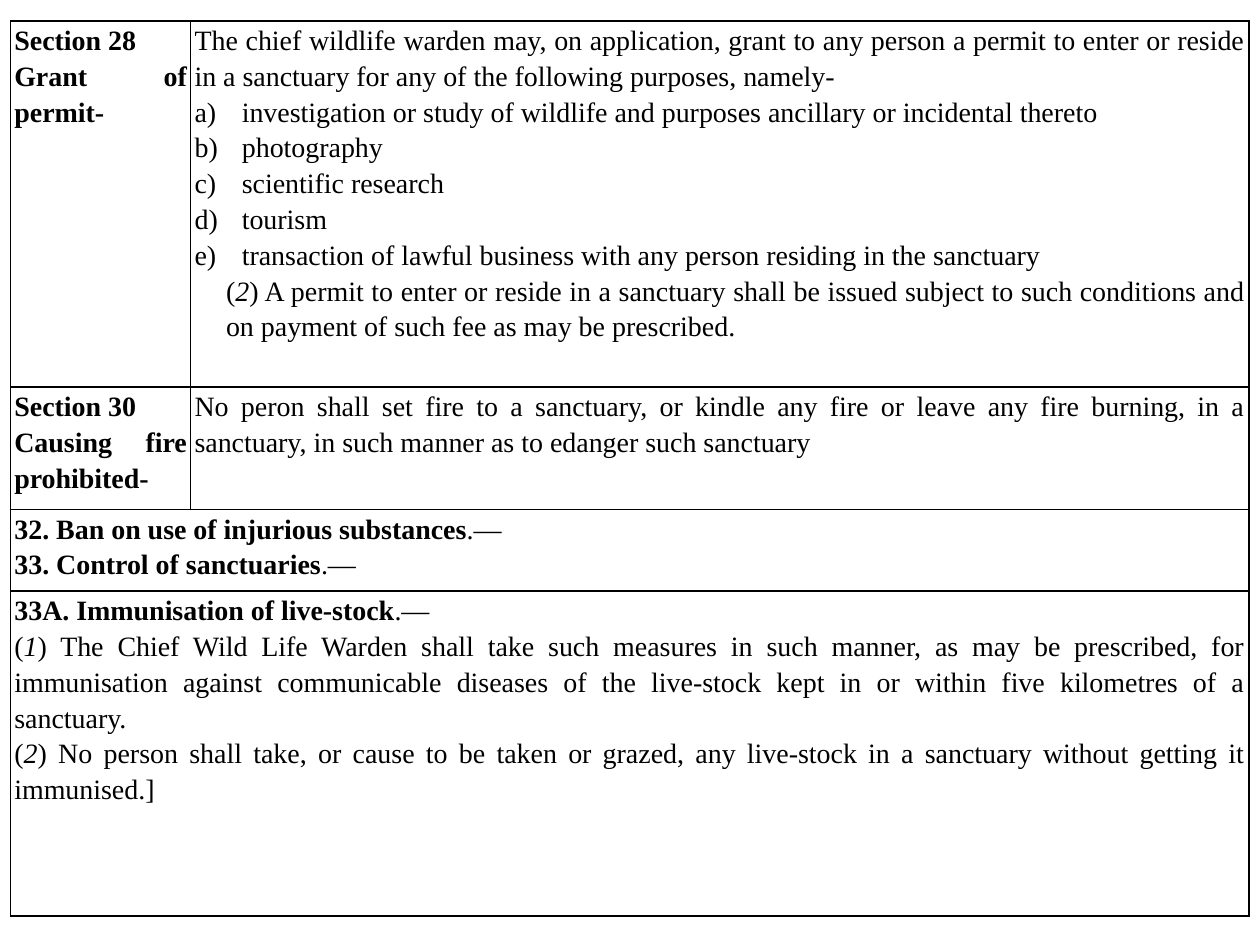
from lxml.etree import SubElement
from pptx import Presentation
from pptx.dml.color import RGBColor
from pptx.enum.text import PP_ALIGN
from pptx.oxml.ns import qn
from pptx.util import Pt

COLOURS = {"ink": "000000"}
FONT = "Times New Roman"
COLUMN_WIDTHS = [103, 604.8]
ROW_HEIGHTS = [209.3, 69.8, 46.7, 185.8]

# Each paragraph is (kind, spans); each span is (text, style).
SECTIONS = [
    [
        [
            ("plain", [("Section 28", "bold")]),
            ("plain", [("Grant of permit-", "bold")]),
        ],
        [
            ("plain", [("The chief wildlife warden may, on application, grant to any person a permit "
                        "to enter or reside in a sanctuary for any of the following purposes, namely-", "")]),
            ("lettered", [("investigation or study of wildlife and purposes ancillary or incidental thereto", "")]),
            ("lettered", [("photography", "")]),
            ("lettered", [("scientific research", "")]),
            ("lettered", [("tourism", "")]),
            ("lettered", [("transaction of lawful business with any person residing in the sanctuary", "")]),
            ("indented", [("(", ""), ("2", "italic"),
                          (") A permit to enter or reside in a sanctuary shall be issued subject to such "
                           "conditions and on payment of such fee as may be prescribed.", "")]),
        ],
    ],
    [
        [
            ("plain", [("Section 30", "bold")]),
            ("plain", [("Causing fire prohibited-", "bold")]),
        ],
        [
            ("plain", [("No peron shall set fire to a sanctuary, or kindle any fire or leave any fire burning, "
                        "in a sanctuary, in such manner as to edanger such sanctuary", "")]),
        ],
    ],
    [
        [
            ("plain", [("32. Ban on use of injurious substances", "bold"), (".— ", "")]),
            ("plain", [("33. Control of sanctuaries", "bold"), (".—", "")]),
        ],
    ],
    [
        [
            ("plain", [("33A. Immunisation of live-stock", "bold"), (".—", "")]),
            ("plain", [("(", ""), ("1", "italic"),
                       (") The Chief Wild Life Warden shall take such measures in such manner, as may be "
                        "prescribed, for immunisation against communicable diseases of the live-stock kept "
                        "in or within five kilometres of a sanctuary. ", "")]),
            ("plain", [("(", ""), ("2", "italic"),
                       (") No person shall take, or cause to be taken or grazed, any live-stock in a "
                        "sanctuary without getting it immunised.]", "")]),
        ],
    ],
]


def add_borders(cell):
    properties = cell._tc.get_or_add_tcPr()
    for position, side in enumerate(("lnL", "lnR", "lnT", "lnB")):
        line = properties.makeelement(qn(f"a:{side}"), {"w": str(Pt(1))})
        fill = SubElement(line, qn("a:solidFill"))
        SubElement(fill, qn("a:srgbClr"), val=COLOURS["ink"])
        properties.insert(position, line)


def write_paragraph(para, kind, spans):
    para.alignment = PP_ALIGN.JUSTIFY
    para.line_spacing = 1.15
    para.font.name = FONT
    para.font.size = Pt(16)
    para.font.color.rgb = RGBColor.from_string(COLOURS["ink"])
    para.font.bold = all(style == "bold" for _, style in spans)
    properties = para._p.get_or_add_pPr()
    if kind == "lettered":
        properties.set("marL", str(Pt(27)))
        properties.set("indent", str(Pt(-27)))
        SubElement(properties, qn("a:buFont"), typeface=FONT)
        SubElement(properties, qn("a:buAutoNum"), type="alphaLcParenR")
        # Bullet elements come before the default run properties.
        properties.append(properties.find(qn("a:defRPr")))
    elif kind == "indented":
        properties.set("marL", str(Pt(18)))
    for text, style in spans:
        span = para.add_run()
        span.text = text
        span.font.name = FONT
        span.font.size = Pt(16)
        span.font.color.rgb = RGBColor.from_string(COLOURS["ink"])
        span.font.bold = style == "bold"
        span.font.italic = style == "italic"


deck = Presentation()
deck.slide_width, deck.slide_height = Pt(720), Pt(540)
page = deck.slides.add_slide(deck.slide_layouts[6])

frame = page.shapes.add_table(
    len(ROW_HEIGHTS), len(COLUMN_WIDTHS), Pt(6), Pt(12),
    Pt(sum(COLUMN_WIDTHS)), Pt(sum(ROW_HEIGHTS)))
table = frame.table
table.first_row = False
table.horz_banding = False
for column, width in zip(table.columns, COLUMN_WIDTHS):
    column.width = Pt(width)
for row, height in zip(table.rows, ROW_HEIGHTS):
    row.height = Pt(height)

for row_index, section in enumerate(SECTIONS):
    if len(section) == 1:
        table.cell(row_index, 0).merge(table.cell(row_index, 1))
    for column_index in range(len(COLUMN_WIDTHS)):
        cell = table.cell(row_index, column_index)
        cell.fill.background()
        cell.margin_left = cell.margin_right = Pt(2.2)
        cell.margin_top = cell.margin_bottom = Pt(0)
        add_borders(cell)
    for column_index, paragraphs in enumerate(section):
        text_frame = table.cell(row_index, column_index).text_frame
        for index, (kind, spans) in enumerate(paragraphs):
            para = text_frame.add_paragraph() if index else text_frame.paragraphs[0]
            write_paragraph(para, kind, spans)

deck.save("out.pptx")
